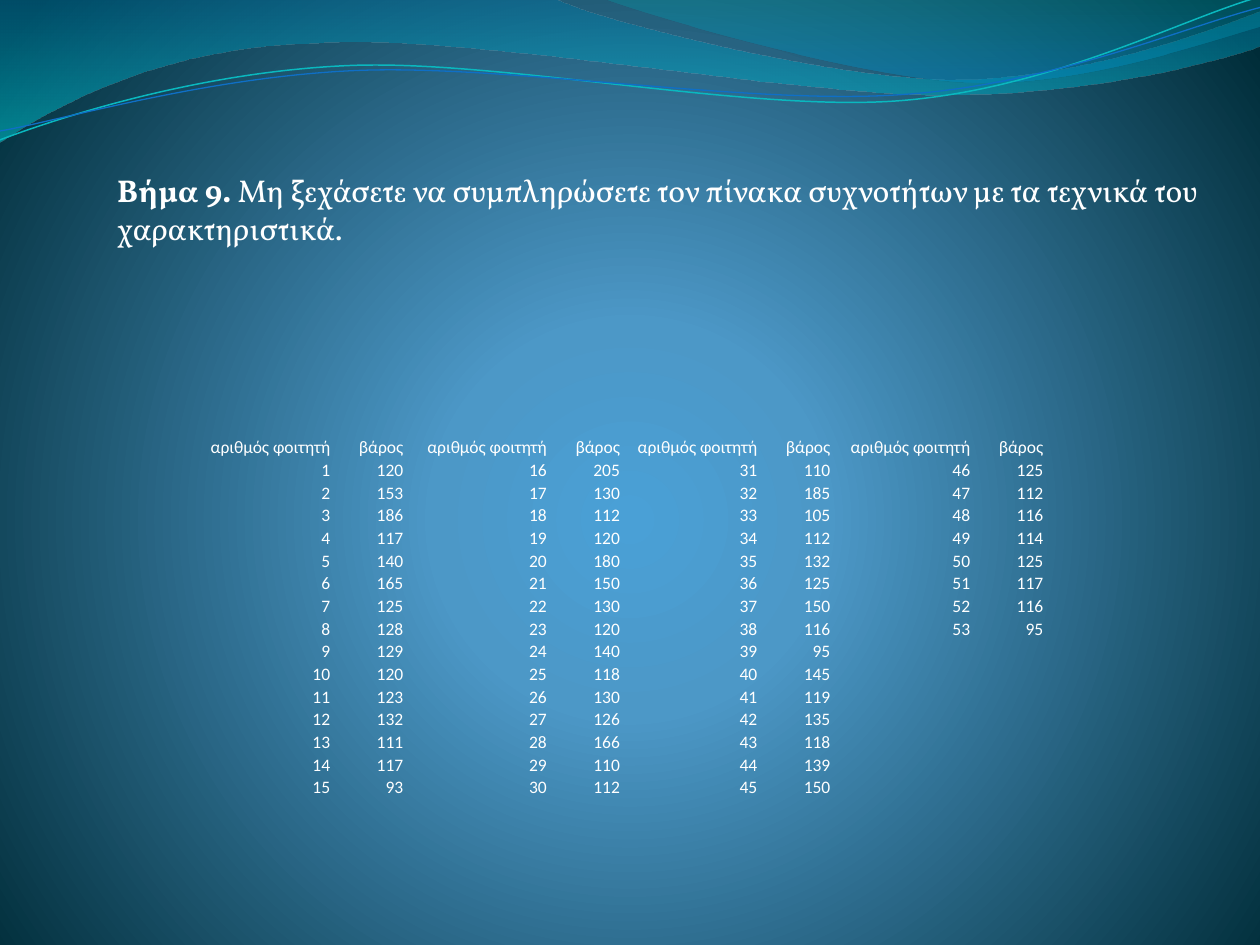
from math import cos, radians, sin

from lxml import etree
from pptx import Presentation
from pptx.dml.color import RGBColor
from pptx.enum.text import MSO_ANCHOR, MSO_AUTO_SIZE, PP_ALIGN
from pptx.oxml.ns import qn
from pptx.util import Inches, Pt

WHITE = RGBColor(0xFF, 0xFF, 0xFF)
SKY = RGBColor(0x4A, 0xA0, 0xD6)
STEEL = RGBColor(0x4C, 0x98, 0xC7)
NIGHT = RGBColor(0x00, 0x2C, 0x38)
DEEP_BLUE = RGBColor(0x00, 0x74, 0xA1)
CYAN = RGBColor(0x00, 0xC6, 0xCF)
TEAL = RGBColor(0x00, 0xA1, 0xA9)
OCEAN = RGBColor(0x00, 0x8B, 0xBF)
AQUA_LINE = RGBColor(0x0A, 0xB8, 0xBF)
BLUE_LINE = RGBColor(0x0F, 0x6F, 0xC6)

NO_STYLE = "{2D5ABB26-0587-4C30-8999-92F81FD0307C}"
LINE_TILT = -2.7

# Each outline is a start point, then segments of one point (straight) or three (curve).
LEFT_WAVE = [(0, 0), [
    [(4.4, -0.01)],
    [(4.76, 0.17), (6.64, 0.63), (7.58, 0.63)],
    [(8.53, 0.63), (9.58, 0.26), (10, 0.09)],
    [(10.01, 0.36)],
    [(9.83, 0.44), (8.7, 0.76), (7.46, 0.75)],
    [(6.22, 0.75), (3.82, 0.28), (2.57, 0.34)],
    [(1.29, 0.36), (0.46, 0.83), (-0.01, 1.13)]]]
RIGHT_WAVE = [(4.79, -0.01), [
    [(5.09, 0.11), (6.82, 0.62), (7.69, 0.65)],
    [(8.56, 0.69), (9.61, 0.32), (10, 0.21)],
    [(10, 0)]]]
AQUA_CURVE = [(0, 1.11), [
    [(0.48, 0.93), (1.58, 0.57), (2.77, 0.52)],
    [(3.95, 0.47), (5.93, 0.89), (7.13, 0.8)],
    [(8.33, 0.71), (9.38, 0.15), (9.98, -0.02)]]]
BLUE_CURVE = [(0, 1.04), [
    [(0.47, 0.96), (1.64, 0.61), (2.83, 0.56)],
    [(4.03, 0.51), (5.97, 0.84), (7.17, 0.75)],
    [(8.36, 0.67), (9.41, 0.21), (10, 0.06)]]]

WEIGHTS = [
    120, 153, 186, 117, 140, 165, 125, 128, 129, 120, 123, 132, 111, 117, 93,
    205, 130, 112, 120, 180, 150, 130, 120, 140, 118, 130, 126, 166, 110, 112,
    110, 185, 105, 112, 132, 125, 150, 116, 95, 145, 119, 135, 118, 139, 150,
    125, 112, 116, 114, 125, 117, 116, 95]
STUDENTS_PER_BLOCK = 15
COLUMN_WIDTHS = [1.02, 0.58, 1.14, 0.58, 1.09, 0.58, 1.11, 0.58]
ROW_HEIGHT = 0.18


def set_gradient(fill, element, stops, direction, **attributes):
    """Give a fill its (position, colour, opacity) stops, in percent, and its direction."""
    fill.gradient()
    gradient = element.find(".//" + qn("a:gradFill"))
    for child in list(gradient):
        gradient.remove(child)
    stop_list = etree.SubElement(gradient, qn("a:gsLst"))
    for position, color, opacity in stops:
        stop = etree.SubElement(stop_list, qn("a:gs"), pos=str(position * 1000))
        tint = etree.SubElement(stop, qn("a:srgbClr"), val=str(color))
        if opacity < 100:
            etree.SubElement(tint, qn("a:alpha"), val=str(opacity * 1000))
    return etree.SubElement(gradient, qn(direction), **attributes)


def paint_background(page):
    stops = [(0, SKY, 100), (25, STEEL, 100), (100, NIGHT, 100)]
    circle = set_gradient(page.background.fill, page.element, stops, "a:path", path="circle")
    etree.SubElement(circle, qn("a:fillToRect"), l="10000", t="110000", r="10000", b="100000")


def add_outline(page, start, segments, closed):
    """Draw an outline, turning each three-point segment into a Bézier curve."""
    builder = page.shapes.build_freeform(Inches(start[0]), Inches(start[1]))
    points = [point for segment in segments for point in segment]
    builder.add_line_segments([(Inches(x), Inches(y)) for x, y in points], close=closed)
    shape = builder.convert_to_shape()
    shape.shadow.inherit = False
    lines = iter(shape.element.findall(".//" + qn("a:lnTo")))
    for segment in segments:
        parts = [next(lines) for _ in segment]
        if len(parts) == 3:
            curve = etree.Element(qn("a:cubicBezTo"))
            parts[0].addprevious(curve)
            for part in parts:
                curve.append(part[0])
                part.getparent().remove(part)
    return shape


def add_wave(page, outline, stops):
    wave = add_outline(page, *outline, closed=True)
    set_gradient(wave.fill, wave.element, stops, "a:lin", ang="5400000", scaled="0")
    wave.line.fill.background()


def add_tilted_curve(page, outline, color, width, center):
    """Level the points around the center, then tilt the whole shape."""
    turn = radians(-LINE_TILT)

    def level(point):
        x, y = point[0] - center[0], point[1] - center[1]
        return (center[0] + x * cos(turn) - y * sin(turn),
                center[1] + x * sin(turn) + y * cos(turn))

    start, segments = outline
    curve = add_outline(page, level(start), [[level(p) for p in s] for s in segments], closed=False)
    curve.rotation = LINE_TILT
    curve.fill.background()
    curve.line.color.rgb = color
    curve.line.width = Pt(width)


def write_title(page):
    title = page.shapes.title
    title.left, title.top = Inches(0.83), Inches(1.31)
    title.width, title.height = Inches(8.9), Inches(3.43)
    frame = title.text_frame
    frame.word_wrap = True
    frame.auto_size = MSO_AUTO_SIZE.NONE
    frame.vertical_anchor = MSO_ANCHOR.TOP
    para = frame.paragraphs[0]
    para.alignment = PP_ALIGN.LEFT
    para.font.size = Pt(18)
    para.font.name = "Vollkorn"
    para.font.color.rgb = WHITE
    for text, bold in [
            ("Βήμα 9. ", True),
            ("Μη ξεχάσετε να συμπληρώσετε τον πίνακα συχνοτήτων "
             "με τα τεχνικά του χαρακτηριστικά.", False)]:
        span = para.add_run()
        span.text = text
        span.font.bold = bold


def format_cell(cell, text):
    cell.fill.background()
    cell.vertical_anchor = MSO_ANCHOR.BOTTOM
    cell.margin_left = cell.margin_right = cell.margin_top = Inches(0.01)
    cell.margin_bottom = 0
    para = cell.text_frame.paragraphs[0]
    para.alignment = PP_ALIGN.RIGHT
    para.font.size = Pt(10)
    para.font.name = "Calibri"
    para.font.color.rgb = WHITE
    if text:
        para.add_run().text = text
    else:
        etree.SubElement(para._p, qn("a:endParaRPr"), sz="1000")


def add_weight_table(page):
    """Fill pairs of columns with student numbers and weights, under an empty top row."""
    blocks = len(COLUMN_WIDTHS) // 2
    rows = [[""] * len(COLUMN_WIDTHS), ["αριθμός φοιτητή", "βάρος"] * blocks]
    for offset in range(STUDENTS_PER_BLOCK):
        row = []
        for block in range(blocks):
            index = block * STUDENTS_PER_BLOCK + offset
            known = index < len(WEIGHTS)
            row += [str(index + 1), str(WEIGHTS[index])] if known else ["", ""]
        rows.append(row)

    frame = page.shapes.add_table(
        len(rows), len(COLUMN_WIDTHS), Inches(1.61), Inches(3.28),
        Inches(sum(COLUMN_WIDTHS)), Inches(ROW_HEIGHT * len(rows)))
    table = frame.table
    table.first_row = table.horz_banding = False
    frame.element.find(".//" + qn("a:tableStyleId")).text = NO_STYLE
    for column, width in zip(table.columns, COLUMN_WIDTHS):
        column.width = Inches(width)
    for line, texts in zip(table.rows, rows):
        line.height = Inches(ROW_HEIGHT)
        for cell, text in zip(line.cells, texts):
            format_cell(cell, text)


def main():
    deck = Presentation()
    deck.slide_width, deck.slide_height = Inches(10), Inches(7.5)
    page = deck.slides.add_slide(deck.slide_layouts[5])
    paint_background(page)
    add_wave(page, LEFT_WAVE, [(0, DEEP_BLUE, 45), (100, CYAN, 55)])
    add_wave(page, RIGHT_WAVE, [(0, TEAL, 30), (80, OCEAN, 45)])
    add_tilted_curve(page, AQUA_CURVE, AQUA_LINE, 0.85, (4.99, 0.58))
    add_tilted_curve(page, BLUE_CURVE, BLUE_LINE, 0.75, (5, 0.59))
    write_title(page)
    add_weight_table(page)
    deck.save("out.pptx")


if __name__ == "__main__":
    main()
